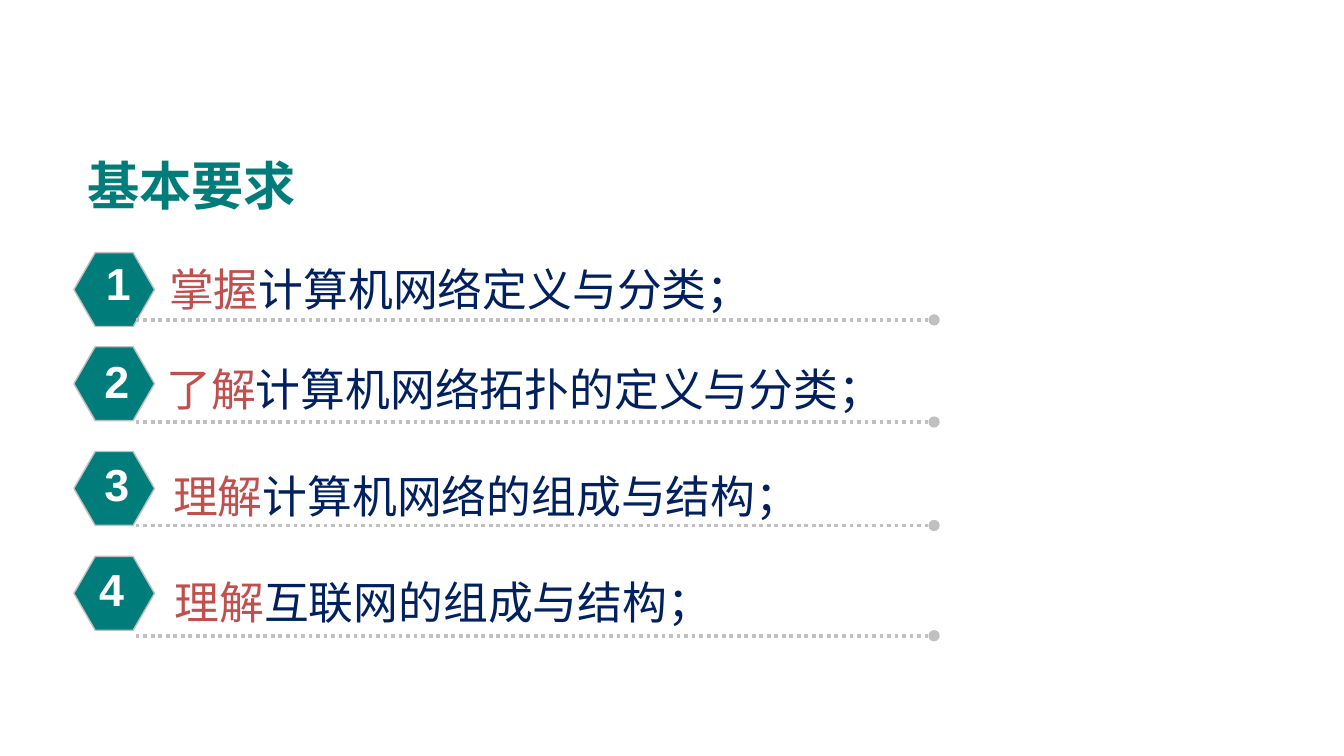
from dataclasses import dataclass

from lxml import etree
from pptx import Presentation
from pptx import util as u
from pptx.dml.color import RGBColor
from pptx.enum import dml, lang, shapes, text
from pptx.oxml import ns


@dataclass(frozen=True)
class Theme:
    teal: str = "007D7A"
    gray: str = "C0C0C0"
    red: str = "C0504D"
    navy: str = "002060"
    white: str = "FFFFFF"
    head: int = 28
    body: int = 24
    cjk: str = "Noto Sans CJK JP"
    serif: str = "Times New Roman"
    sans: str = "Arial"


class Deck:
    cols, rows = 100, 56.25

    def __init__(self, theme):
        self.theme = theme
        self.prs = Presentation()
        self.prs.slide_width = u.Inches(10)
        self.prs.slide_height = self.prs.slide_width * 9 // 16
        self.slide = self.prs.slides.add_slide(self.prs.slide_layouts[5])

    def grid(self, x, y):
        return (round(x * self.prs.slide_width / self.cols),
                round(y * self.prs.slide_height / self.rows))

    def run(self, para, words, font, color, size, bold=False):
        run = para.add_run()
        run.text = words
        face = run.font
        face.name, face.size, face.bold = font, u.Pt(size), bold
        face.color.rgb = RGBColor.from_string(color)
        face.language_id = lang.MSO_LANGUAGE_ID.SIMPLIFIED_CHINESE
        east = etree.Element(ns.qn("a:ea"), typeface=self.theme.cjk)
        run._r.rPr.find(ns.qn("a:latin")).addnext(east)

    def title(self, x, y, w, h, words):
        box = self.slide.shapes.title
        box.left, box.top = self.grid(x, y)
        box.width, box.height = self.grid(w, h)
        frame = box.text_frame
        frame.auto_size = text.MSO_AUTO_SIZE.NONE
        frame.vertical_anchor = text.MSO_ANCHOR.MIDDLE
        para = frame.paragraphs[0]
        para.alignment = text.PP_ALIGN.LEFT
        para.line_spacing = 1.2
        self.run(para, words, self.theme.cjk, self.theme.teal,
                 self.theme.head, True)

    def box(self, x, y, w, h):
        box = self.slide.shapes.add_textbox(*self.grid(x, y), *self.grid(w, h))
        box.text_frame.word_wrap = True
        return box.text_frame

    def badge(self, x, y, w, h):
        hexa = self.slide.shapes.add_shape(
            shapes.MSO_SHAPE.HEXAGON, *self.grid(x, y), *self.grid(w, h))
        hexa.shadow.inherit = False
        hexa.adjustments[0] = 0.289
        hexa.fill.solid()
        hexa.fill.fore_color.rgb = RGBColor.from_string(self.theme.teal)
        hexa.line.color.rgb = RGBColor.from_string(self.theme.gray)
        hexa.line.width = u.Pt(0.75)

    def digit(self, x, y, w, h, words):
        frame = self.box(x, y, w, h)
        frame.margin_left = frame.margin_right = 0
        para = frame.paragraphs[0]
        para.alignment = text.PP_ALIGN.CENTER
        self.run(para, words, self.theme.sans, self.theme.white,
                 self.theme.body, True)

    def item(self, x, y, w, h, verb, rest):
        para = self.box(x, y, w, h).paragraphs[0]
        self.run(para, verb, self.theme.serif, self.theme.red, self.theme.body)
        self.run(para, rest, self.theme.cjk, self.theme.navy, self.theme.body)

    def rule(self, x, y, end):
        rule = self.slide.shapes.add_connector(
            shapes.MSO_CONNECTOR.STRAIGHT, *self.grid(x, y), *self.grid(end, y))
        rule.line.color.rgb = RGBColor.from_string(self.theme.gray)
        rule.line.width = u.Pt(2)
        rule.line.dash_style = dml.MSO_LINE.ROUND_DOT
        etree.SubElement(rule.line._get_or_add_ln(), ns.qn("a:tailEnd"),
                         type="oval")
        etree.SubElement(rule._element.spPr, ns.qn("a:effectLst"))

    def save(self):
        self.prs.save("out.pptx")


def main():
    deck = Deck(Theme())
    deck.title(5.5, 8.6, 52, 9.4, "基本要求")
    goals = [
        (18.8, (6.9, 18.5), (11.6, 19), 23.8, "掌握", "计算机网络定义与分类；"),
        (25.8, (6.8, 25.8), (11.4, 26.4), 31.4, "了解", "计算机网络拓扑的定义与分类；"),
        (33.6, (6.8, 33.5), (11.9, 34.4), 39.1, "理解", "计算机网络的组成与结构；"),
        (41.4, (6.4, 41.3), (12, 42.3), 47.3, "理解", "互联网的组成与结构；"),
    ]
    for num, (top, mark, spot, base, verb, rest) in enumerate(goals, 1):
        deck.badge(5.5, top, 6, 5.5)
        deck.rule(10.1, base, 69.5)
        deck.digit(*mark, 3.8, 4.8, str(num))
        deck.item(*spot, 58, 5, verb, rest)
    deck.save()


if __name__ == "__main__":
    main()
